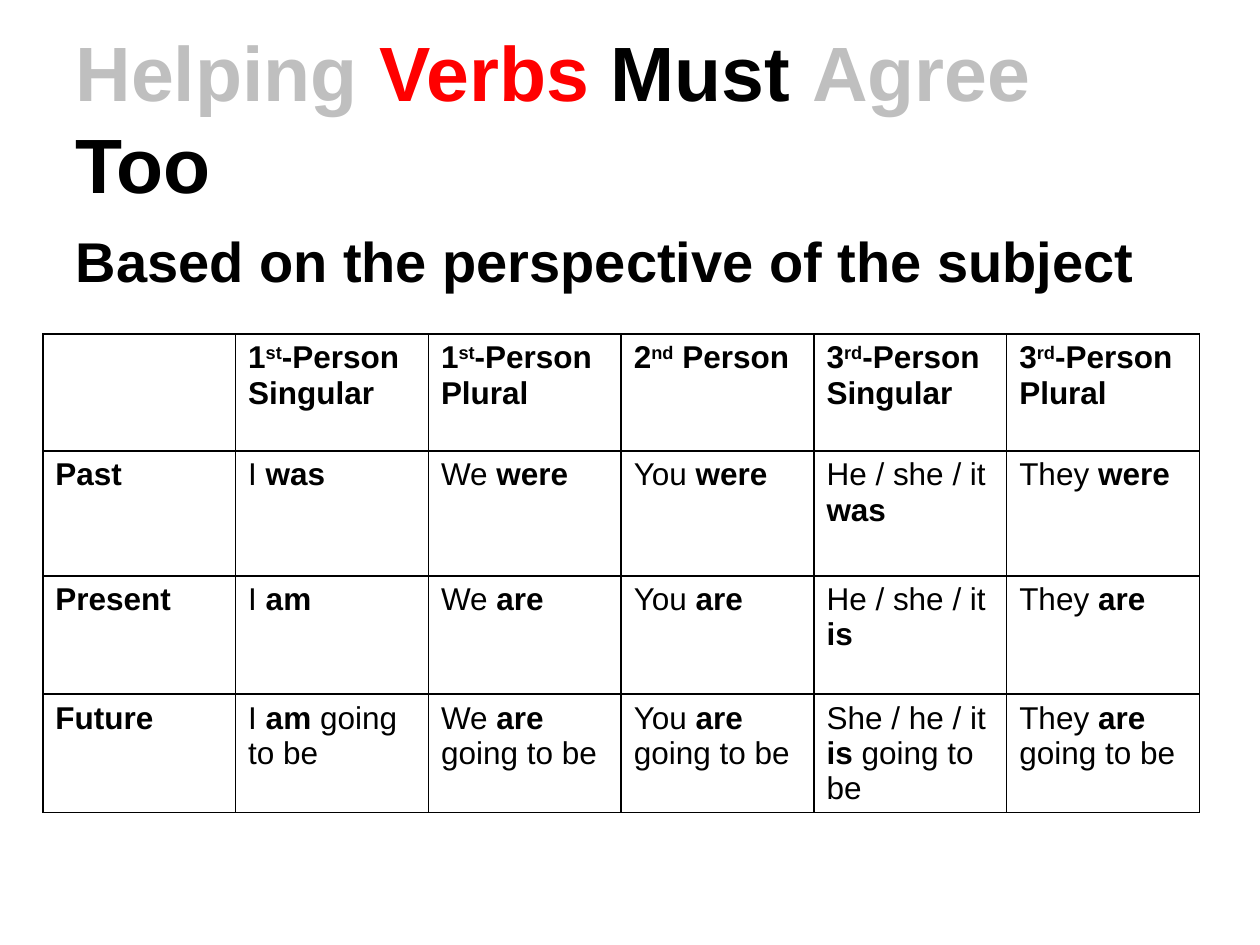
from lxml.etree import SubElement as Sub
from pptx import Presentation
from pptx.dml.color import RGBColor as RGB
from pptx.enum.text import MSO_ANCHOR as Anchor, MSO_AUTO_SIZE as Fit, PP_ALIGN as Align
from pptx.oxml.ns import qn
from pptx.util import Inches, Pt

# Content
COLORS = {"ink": "000000", "gray": "BFBFBF", "red": "FF0000"}
FONT = "Arial"
TITLE = [("Helping ", "gray"), ("Verbs", "red"), (" Must ", "ink"),
         ("Agree", "gray"), (" Too", "ink")]
LEAD = "Based on the perspective of the subject"

# Header cells: number, raised ending, rest
HEADS = [("1", "st", "-Person Singular"), ("1", "st", "-Person Plural"),
         ("2", "nd", " Person"), ("3", "rd", "-Person Singular"),
         ("3", "rd", "-Person Plural")]
# Each cell: plain, bold, plain; a line break starts a new paragraph
TENSES = {
    "Past": [("I ", "was"), ("We ", "were"), ("You ", "were"),
             ("He / she / it\n", "was"), ("They ", "were")],
    "Present": [("I ", "am"), ("We ", "are"), ("You ", "are"),
                ("He / she / it ", "is"), ("They ", "are")],
    "Future": [(who, verb, " going to be") for who, verb in
               [("I ", "am"), ("We ", "are"), ("You ", "are"),
                ("She / he / it ", "is"), ("They ", "are")]],
}

# Grid, in inches
LEFT, TOP, COL = 0.34, 2.65, 1.53
ROWS = [0.93, 0.99, 0.94, 0.94]


def add_run(para, text, size, color="ink", bold=True, raised=False):
    run = para.add_run()
    run.text = text
    font = run.font
    font.name, font.size, font.bold = FONT, Pt(size), bold
    font.color.rgb = RGB.from_string(COLORS[color])
    if raised:
        run._r.get_or_add_rPr().set("baseline", "30000")


def place(holder, top, height, anchor):
    holder.left, holder.top = Inches(0.5), Inches(top)
    holder.width, holder.height = Inches(9), Inches(height)
    frame = holder.text_frame
    frame.auto_size, frame.vertical_anchor = Fit.NONE, anchor
    para = frame.paragraphs[0]
    para.alignment = Align.LEFT
    return para


def style_cell(cell):
    props = cell._tc.get_or_add_tcPr()
    for side in ("lnL", "lnR", "lnT", "lnB"):
        line = Sub(props, qn("a:" + side), w=str(Pt(1)))
        Sub(Sub(line, qn("a:solidFill")), qn("a:srgbClr"), val=COLORS["ink"])
    cell.fill.background()


def fill_verb(cell, parts):
    para = cell.text_frame.paragraphs[0]
    for i, part in enumerate(parts):
        add_run(para, part.rstrip("\n"), 18, bold=i == 1)
        if part.endswith("\n"):
            para = cell.text_frame.add_paragraph()


def main():
    prs = Presentation()
    prs.slide_width, prs.slide_height = Inches(10), Inches(7.5)
    slide = prs.slides.add_slide(prs.slide_layouts[1])

    # Title and lead line
    para = place(slide.shapes.title, 0.3, 1.25, Anchor.MIDDLE)
    for text, color in TITLE:
        add_run(para, text, 44, color)
    para = place(slide.placeholders[1], 1.75, 4.95, Anchor.TOP)
    props = para._p.get_or_add_pPr()
    props.set("marL", "0")
    props.set("indent", "0")
    Sub(props, qn("a:buNone"))
    add_run(para, LEAD, 32)

    # Table frame
    count = len(HEADS) + 1
    table = slide.shapes.add_table(
        len(ROWS), count, Inches(LEFT), Inches(TOP),
        Inches(COL * count), Inches(sum(ROWS))).table
    table.first_row = table.horz_banding = False
    for col in table.columns:
        col.width = Inches(COL)
    for row, height in zip(table.rows, ROWS):
        row.height = Inches(height)
    for cell in table.iter_cells():
        style_cell(cell)

    # Table text
    for c, parts in enumerate(HEADS, 1):
        para = table.cell(0, c).text_frame.paragraphs[0]
        for i, part in enumerate(parts):
            add_run(para, part, 18, raised=i == 1)
    for r, (tense, verbs) in enumerate(TENSES.items(), 1):
        add_run(table.cell(r, 0).text_frame.paragraphs[0], tense, 18)
        for c, parts in enumerate(verbs, 1):
            fill_verb(table.cell(r, c), parts)

    prs.save("out.pptx")


if __name__ == "__main__":
    main()
